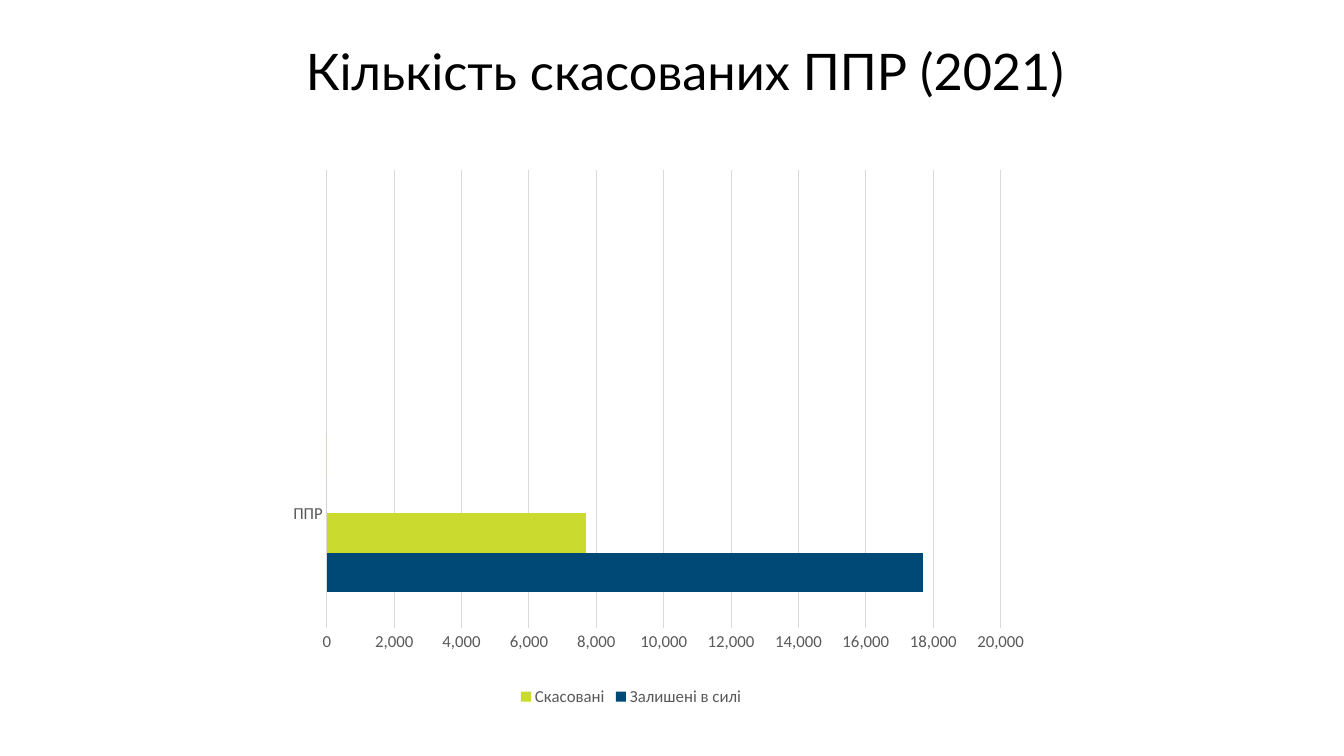
from dataclasses import dataclass

from lxml.etree import SubElement
from pptx import Presentation
from pptx.chart.data import CategoryChartData
from pptx.dml.color import RGBColor
from pptx.enum.chart import XL_CHART_TYPE as ChartType
from pptx.enum.chart import XL_LEGEND_POSITION as LegendPosition
from pptx.enum.chart import XL_TICK_MARK as TickMark
from pptx.enum.text import MSO_ANCHOR, MSO_AUTO_SIZE, PP_ALIGN
from pptx.oxml import parse_xml
from pptx.oxml.ns import nsdecls, qn
from pptx.util import Inches, Pt


@dataclass(frozen=True)
class Theme:
    title_font: str = "Lato"
    chart_font: str = "Calibri"
    title_size: Pt = Pt(36)
    label_size: Pt = Pt(12)
    hairline: Pt = Pt(0.75)
    title_color: RGBColor = RGBColor.from_string("000000")
    label_color: RGBColor = RGBColor.from_string("595959")
    grid_color: RGBColor = RGBColor.from_string("D9D9D9")


THEME = Theme()
CATEGORIES = ("ППР", "")
# Name, values, colour; the two unnamed series keep their room in the group.
SERIES = (
    ("Залишені в силі", (17700, None), "004976"),
    ("Скасовані", (7700, None), "CADA2F"),
    ("", (0, None), "A5A5A5"),
    ("", (0, None), "FFC000"),
)
HIDDEN_LEGEND_ENTRIES = (0, 1)
PLOT_AREA = {"x": 0.131, "y": 0.018, "w": 0.817, "h": 0.832}


def style_font(font, name, size, color):
    font.name, font.size = name, size
    font.color.rgb = color


def style_line(line):
    line.color.rgb = THEME.grid_color
    line.width = THEME.hairline


def add_title(page, text, left, top, width, height):
    title = page.shapes.title
    title.left, title.top, title.width, title.height = left, top, width, height
    frame = title.text_frame
    frame.text = text
    frame.word_wrap = False
    frame.auto_size = MSO_AUTO_SIZE.SHAPE_TO_FIT_TEXT
    frame.vertical_anchor = MSO_ANCHOR.TOP
    para = frame.paragraphs[0]
    para.alignment = PP_ALIGN.CENTER
    style_font(para.runs[0].font, THEME.title_font, THEME.title_size, THEME.title_color)


def place_plot(chart):
    """Fix the inner plot area as fractions of the chart box."""
    plot_area = chart.plots[0]._element.getparent()
    for old_layout in plot_area.findall(qn("c:layout")):
        plot_area.remove(old_layout)
    layout = parse_xml(f"<c:layout {nsdecls('c')}><c:manualLayout/></c:layout>")
    settings = {"layoutTarget": "inner", "xMode": "edge", "yMode": "edge", **PLOT_AREA}
    for tag, value in settings.items():
        SubElement(layout[0], qn(f"c:{tag}")).set("val", str(value))
    plot_area.insert(0, layout)


def add_legend(chart):
    chart.has_legend = True
    legend = chart.legend
    legend.position = LegendPosition.BOTTOM
    legend.include_in_layout = False
    style_font(legend.font, THEME.chart_font, THEME.label_size, THEME.label_color)
    position = legend._element.find(qn("c:legendPos"))
    for index in reversed(HIDDEN_LEGEND_ENTRIES):
        position.addnext(parse_xml(
            f'<c:legendEntry {nsdecls("c")}><c:idx val="{index}"/>'
            '<c:delete val="1"/></c:legendEntry>'
        ))


def style_axes(chart):
    categories, values = chart.category_axis, chart.value_axis
    for axis in (categories, values):
        axis.major_tick_mark = axis.minor_tick_mark = TickMark.NONE
        style_font(axis.tick_labels.font, THEME.chart_font,
                   THEME.label_size, THEME.label_color)
    style_line(categories.format.line)
    values.format.line.fill.background()
    values.has_major_gridlines = True
    style_line(values.major_gridlines.format.line)
    values.minimum_scale, values.maximum_scale = 0, 20000
    values.major_unit = 2000
    values.tick_labels.number_format = "#,##0"
    values.tick_labels.number_format_is_linked = False


def add_bar_chart(page, left, top, width, height):
    data = CategoryChartData(number_format="General")
    data.categories = CATEGORIES
    for name, values, _ in SERIES:
        data.add_series(name, values)
    chart = page.shapes.add_chart(
        ChartType.BAR_CLUSTERED, left, top, width, height, data).chart
    chart.has_title = False
    style_font(chart.font, THEME.chart_font, THEME.label_size, THEME.label_color)
    plot = chart.plots[0]
    plot.gap_width = 182
    plot.vary_by_categories = False
    for series, (_, _, color) in zip(plot.series, SERIES):
        series.invert_if_negative = False
        series.format.fill.solid()
        series.format.fill.fore_color.rgb = RGBColor.from_string(color)
    style_axes(chart)
    add_legend(chart)
    place_plot(chart)


def main():
    deck = Presentation()
    deck.slide_width, deck.slide_height = Inches(13.33), Inches(7.5)
    title_only = deck.slide_layouts[5]
    page = deck.slides.add_slide(title_only)
    add_bar_chart(page, Inches(2.17), Inches(1.59), Inches(8.18), Inches(5.46))
    add_title(page, "Кількість скасованих ППР (2021)",
              Inches(2.78), Inches(0.35), Inches(8.03), Inches(0.71))
    deck.save("out.pptx")


if __name__ == "__main__":
    main()
